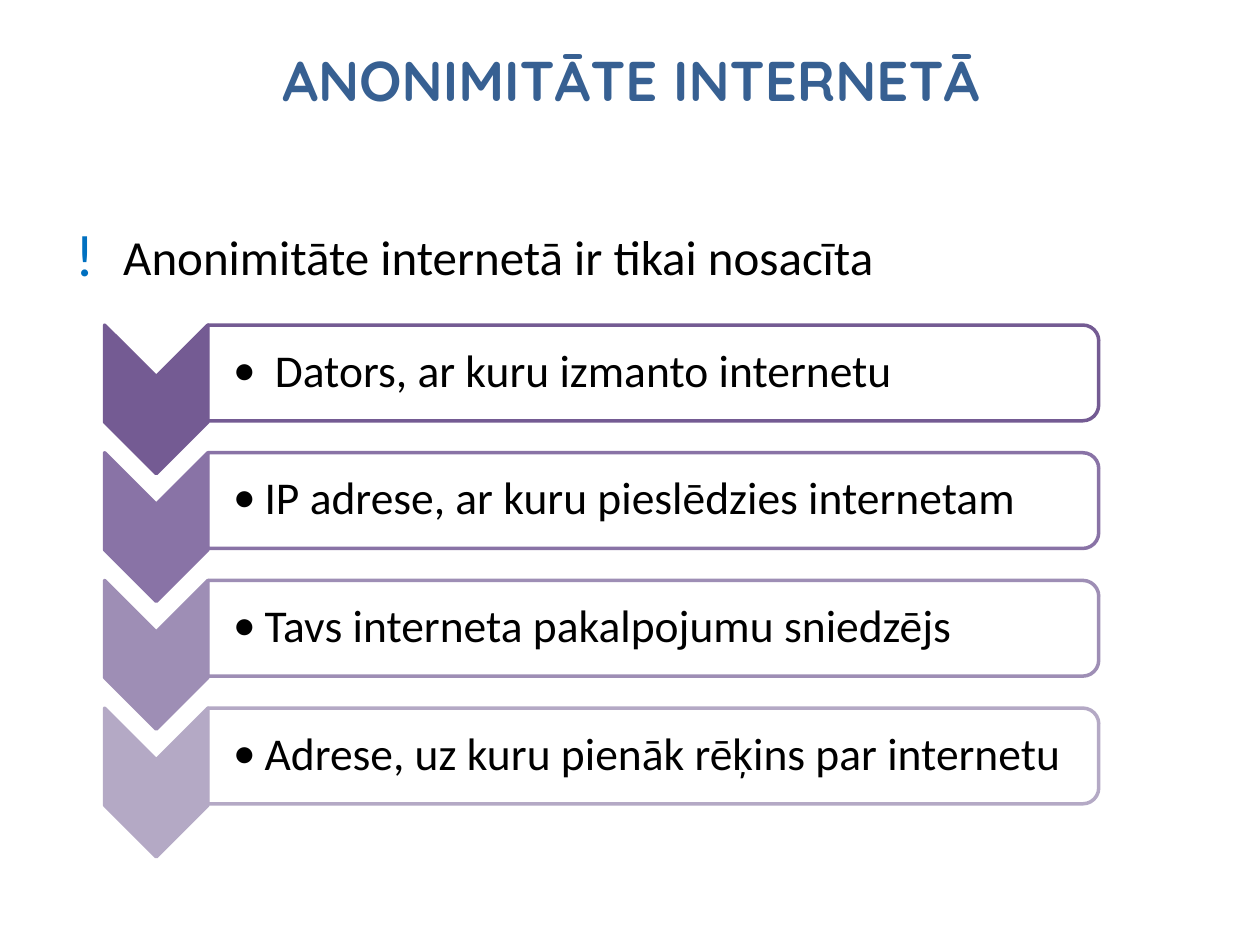
from dataclasses import dataclass
from typing import Optional

from lxml.etree import SubElement
from pptx import Presentation
from pptx.dml.color import RGBColor
from pptx.enum.shapes import MSO_SHAPE
from pptx.enum.text import MSO_ANCHOR, PP_ALIGN
from pptx.oxml.ns import qn
from pptx.util import Inches, Pt

COLORS = {
    "title": "376092", "text": "000000", "mark": "0070C0", "bar": "FFFFFF",
    "row1": "745B93", "row2": "8973A6", "row3": "9E8EB5", "row4": "B4A9C5",
}
WIDTH, HEIGHT = 10, 7.5
# Four rows share one grid
ROW_TOP, ROW_PITCH = 2.58, 3.04 / 3
BAR_LEFT, BAR_WIDTH, BAR_HEIGHT = 1.65, 7.07, 0.76
CHEVRON_WIDTH, CHEVRON_HEIGHT = 0.82, 1.18


@dataclass
class Box:
    left: float
    top: float
    width: float
    height: float


@dataclass
class Bullet:
    char: str
    indent: float
    color: Optional[str] = None
    percent: int = 100


@dataclass
class Row:
    text: str
    color: str


ROWS = [
    Row(" Dators, ar kuru izmanto internetu", "row1"),
    Row("IP adrese, ar kuru pieslēdzies internetam", "row2"),
    Row("Tavs interneta pakalpojumu sniedzējs", "row3"),
    Row("Adrese, uz kuru pienāk rēķins par internetu", "row4"),
]


def rgb(name: str) -> RGBColor:
    return RGBColor.from_string(COLORS[name])


def set_all(obj, values: dict) -> None:
    for name, value in values.items():
        setattr(obj, name, value)


def add_bullet(p, bullet: Bullet) -> None:
    pPr = p._p.get_or_add_pPr()
    pPr.set("marL", str(Inches(bullet.indent)))
    pPr.set("indent", str(-Inches(bullet.indent)))
    if bullet.color:
        clr = SubElement(pPr, qn("a:buClr"))
        SubElement(clr, qn("a:srgbClr"), val=COLORS[bullet.color])
    SubElement(pPr, qn("a:buSzPct"), val=str(bullet.percent * 1000))
    SubElement(pPr, qn("a:buFont"), typeface="Calibri")
    SubElement(pPr, qn("a:buChar"), char=bullet.char)


def add_text(shapes, box: Box, text: str, font: dict, color: str,
             frame: dict, para: dict, bullet: Optional[Bullet] = None) -> None:
    sp = shapes.add_textbox(Inches(box.left), Inches(box.top),
                            Inches(box.width), Inches(box.height))
    tf = sp.text_frame
    set_all(tf, {"word_wrap": True, **frame})
    p = tf.paragraphs[0]
    set_all(p, para)
    if bullet:
        add_bullet(p, bullet)
    r = p.add_run()
    r.text = text
    set_all(r.font, font)
    r.font.color.rgb = rgb(color)


def add_turned(shapes, kind: MSO_SHAPE, seen: Box, fill: str, line: str):
    """Place a shape turned by 90 degrees so that it covers the seen box."""
    shift = (seen.width - seen.height) / 2
    sp = shapes.add_shape(kind, Inches(seen.left + shift), Inches(seen.top - shift),
                          Inches(seen.height), Inches(seen.width))
    sp.rotation = 90
    sp.shadow.inherit = False
    sp.fill.solid()
    sp.fill.fore_color.rgb = rgb(fill)
    sp.line.color.rgb = rgb(line)
    sp.line.width = Pt(2)
    return sp


def add_row(shapes, index: int, row: Row) -> None:
    top = ROW_TOP + index * ROW_PITCH
    chevron = Box(BAR_LEFT - CHEVRON_WIDTH, top, CHEVRON_WIDTH, CHEVRON_HEIGHT)
    bar = Box(BAR_LEFT, top, BAR_WIDTH, BAR_HEIGHT)
    add_turned(shapes, MSO_SHAPE.CHEVRON, chevron, row.color, row.color)
    sp = add_turned(shapes, MSO_SHAPE.ROUND_2_SAME_RECTANGLE, bar, "bar", row.color)
    fill = sp._element.spPr.find(qn("a:solidFill"))
    SubElement(fill[0], qn("a:alpha"), val="90000")
    small = Inches(0.02)
    add_text(
        shapes, Box(BAR_LEFT, top + 0.03, 7.03, 0.69), row.text,
        {"name": "Calibri", "size": Pt(26)}, "text",
        {"vertical_anchor": MSO_ANCHOR.MIDDLE, "margin_left": Inches(0.2),
         "margin_top": small, "margin_right": small, "margin_bottom": small},
        {"line_spacing": 0.9, "space_after": Pt(3.9)}, Bullet("•", 0.25))


def main() -> None:
    prs = Presentation()
    prs.slide_width, prs.slide_height = Inches(WIDTH), Inches(HEIGHT)
    s = prs.slides.add_slide(prs.slide_layouts[6])

    # Title
    add_text(s.shapes, Box(0.51, 0, WIDTH * 0.9, HEIGHT / 6), "ANONIMITĀTE INTERNETĀ",
             {"name": "Quicksand", "size": Pt(32), "bold": True}, "title",
             {"vertical_anchor": MSO_ANCHOR.MIDDLE}, {"alignment": PP_ALIGN.CENTER})

    # Statement
    add_text(s.shapes, Box(WIDTH * 0.05, 1.75, WIDTH * 0.9, HEIGHT * 0.66),
             "Anonimitāte internetā ir tikai nosacīta",
             {"name": "Calibri", "size": Pt(28)}, "text", {},
             {"space_before": Pt(5.6)}, Bullet("!", 0.38, "mark", 120))

    # Chevron list
    group = s.shapes.add_group_shape()
    for index, row in enumerate(ROWS):
        add_row(group.shapes, index, row)

    prs.save("out.pptx")


if __name__ == "__main__":
    main()
